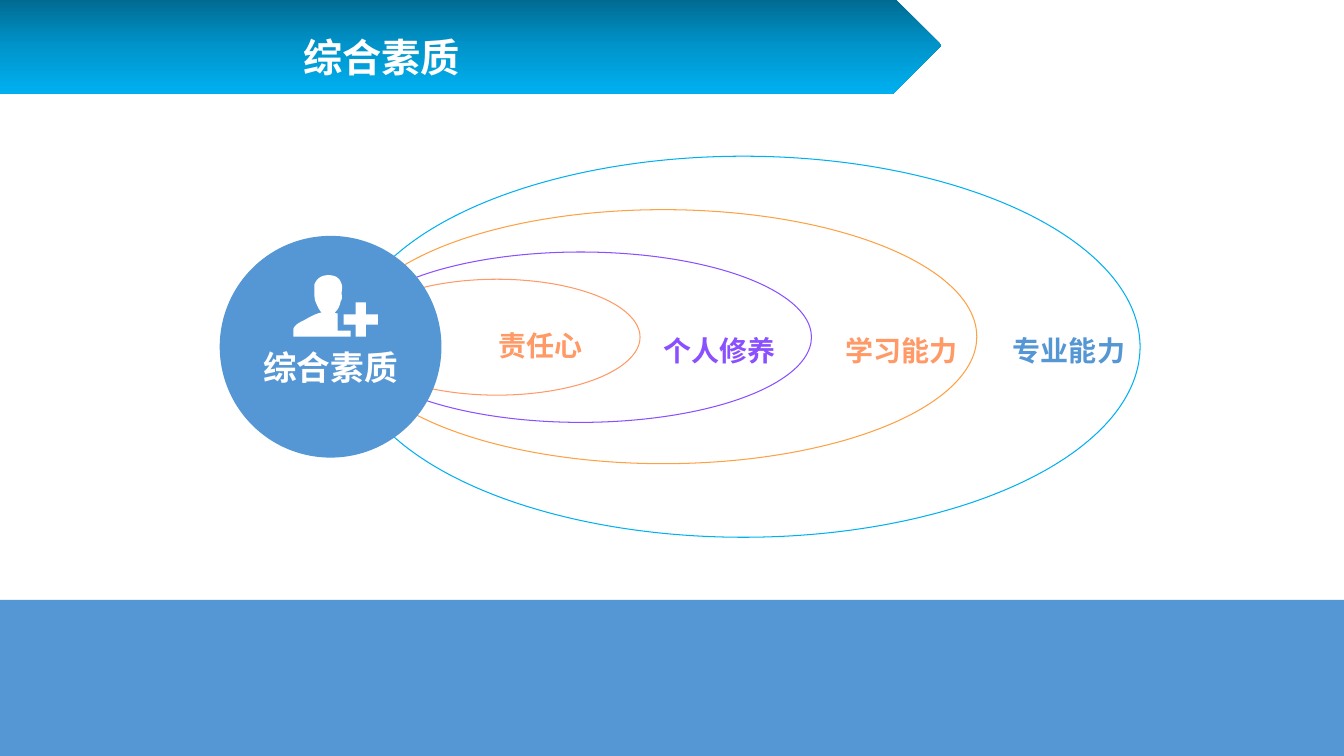
from copy import deepcopy

from lxml.etree import SubElement
from pptx import Presentation
from pptx.dml.color import RGBColor
from pptx.enum.shapes import MSO_SHAPE
from pptx.enum.text import MSO_ANCHOR, MSO_AUTO_SIZE, PP_ALIGN
from pptx.oxml.ns import qn
from pptx.util import Inches, Pt

BLUE = RGBColor(0x54, 0x97, 0xD4)
SKY = RGBColor(0x00, 0xB0, 0xF0)
MID_SKY = RGBColor(0x00, 0x94, 0xCA)
DEEP_SKY = RGBColor(0x00, 0x68, 0x8E)
CORAL = RGBColor(0xFF, 0x99, 0x66)
ORANGE = RGBColor(0xFE, 0xA1, 0x44)
VIOLET = RGBColor(0x8A, 0x4F, 0xFF)
WHITE = RGBColor(0xFF, 0xFF, 0xFF)

COLUMNS, ROWS = 133.33, 75  # square grid cells, ten to the inch


def grid(*cells):
    return [Inches(cell / 10) for cell in cells]


def curve(start, c1, c2, end, steps=8):
    """Points along a Bezier curve, without its start."""
    points = []
    for i in range(1, steps + 1):
        t = i / steps
        u = 1 - t
        points.append(tuple(u**3 * a + 3 * u * u * t * b + 3 * u * t * t * c + t**3 * d
                            for a, b, c, d in zip(start, c1, c2, end)))
    return points


class Deck:
    font = "Noto Sans CJK SC"
    line_spacing = 1.5
    ring_width = Pt(0.75)

    def __init__(self, prs):
        self.slide = prs.slides.add_slide(prs.slide_layouts[5])
        self.shapes = self.slide.shapes

    def add_text(self, tf, text, size, color, align=PP_ALIGN.LEFT, spacing=None):
        p = tf.paragraphs[0]
        p.alignment = align
        p.line_spacing = spacing
        r = p.add_run()
        r.text = text
        r.font.size = Pt(size)
        r.font.bold = True
        r.font.name = self.font
        r.font.color.rgb = color
        SubElement(r.font._element, qn("a:ea"), typeface=self.font)

    def paint(self, sp, fill=None, line=None):
        sp.shadow.inherit = False
        if fill is None:
            sp.fill.background()
        else:
            sp.fill.solid()
            sp.fill.fore_color.rgb = fill
        if line is None:
            sp.line.fill.background()
        else:
            sp.line.color.rgb = line
            sp.line.width = self.ring_width
        return sp

    def shape(self, kind, box, fill=None, line=None):
        return self.paint(self.shapes.add_shape(kind, *grid(*box)), fill, line)

    def banner(self, box, colors):
        sp = self.shape(MSO_SHAPE.PENTAGON, box)
        sp.fill.gradient()
        sp.fill.gradient_angle = 270
        stops = sp._element.find(".//" + qn("a:gsLst"))
        stops.append(deepcopy(stops[-1]))
        for i, (stop, color) in enumerate(zip(sp.fill.gradient_stops, colors)):
            stop.position = i / (len(colors) - 1)
            stop.color.rgb = color

    def title(self, box, text):
        sp = self.shapes.title
        sp.left, sp.top, sp.width, sp.height = grid(*box)
        tf = sp.text_frame
        tf.word_wrap = False
        tf.auto_size = MSO_AUTO_SIZE.SHAPE_TO_FIT_TEXT
        tf.vertical_anchor = MSO_ANCHOR.TOP
        self.add_text(tf, text, 28, WHITE, spacing=self.line_spacing)
        self.shapes._spTree.append(sp._element)  # bring in front of the banner

    def label(self, box, text, color):
        tf = self.shapes.add_textbox(*grid(*box)).text_frame
        tf.word_wrap = True
        tf.auto_size = MSO_AUTO_SIZE.SHAPE_TO_FIT_TEXT
        self.add_text(tf, text, 20, color, spacing=self.line_spacing)

    def hub(self, box, text):
        tf = self.shape(MSO_SHAPE.OVAL, box, BLUE).text_frame
        tf.word_wrap = True
        tf.vertical_anchor = MSO_ANCHOR.MIDDLE
        tf.margin_top = Inches(0.45)  # leaves room for the icon
        self.add_text(tf, text, 24, WHITE, PP_ALIGN.CENTER)

    def outline(self, points, fill):
        start, *rest = [grid(*point) for point in points]
        builder = self.shapes.build_freeform(*start, scale=1.0)
        builder.add_line_segments(rest, close=True)
        return self.paint(builder.convert_to_shape(), fill)


def person():
    points = [(34.8, 32.8), (33.5, 32.8), (33.5, 31.1)]
    for c1, c2, end in [
        ((33.5, 31.1), (33.3, 31.1), (33.2, 31)),
        ((33.5, 30.8), (33.7, 30.4), (33.8, 29.9)),
        ((34, 29.6), (33.9, 29.4), (33.9, 29.1)),
        ((33.9, 28.8), (34, 28.4), (33.9, 28.2)),
        ((33.7, 27.5), (33.2, 27.3), (32.6, 27.3)),
        ((32, 27.3), (31.5, 27.5), (31.2, 28.2)),
        ((31.2, 28.4), (31.2, 28.8), (31.2, 29.1)),
        ((31.2, 29.4), (31.2, 29.6), (31.3, 29.9)),
        ((31.5, 30.4), (31.7, 30.8), (31.9, 31)),
        ((31, 31.2), (30.4, 31.7), (29.9, 31.9)),
        ((29.1, 32.3), (29.1, 32.7), (29.1, 32.7)),
    ]:
        points += curve(points[-1], c1, c2, end)
    return points + [(29.1, 33.4), (34.8, 33.4)]


def main():
    prs = Presentation()
    prs.slide_width, prs.slide_height = grid(COLUMNS, ROWS)
    deck = Deck(prs)

    # Header and footer band
    deck.banner((0, -0.3, 93.4, 9.6), (DEEP_SKY, MID_SKY, SKY))
    deck.title((29.1, 0.5, 17.7, 7.2), "综合素质")
    deck.shape(MSO_SHAPE.RECTANGLE, (0, 59.5, COLUMNS, ROWS - 59.5), BLUE)

    # Rings, from the inside out
    for box, color in [
        ((35.1, 27.7, 28.4, 11.5), CORAL),
        ((34.7, 25, 45.8, 16.9), VIOLET),
        ((34.7, 20.8, 62.2, 25.2), ORANGE),
        ((34.4, 15.5, 78.7, 37.8), SKY),
    ]:
        deck.shape(MSO_SHAPE.OVAL, box, line=color)

    # Ring labels
    for left, top, width, text, color in [
        (99.5, 30.9, 16.8, "专业能力", BLUE),
        (82.9, 30.9, 16.8, "学习能力", CORAL),
        (64.8, 30.9, 16.8, "个人修养", VIOLET),
        (48.5, 30.4, 10.9, "责任心", CORAL),
    ]:
        deck.label((left, top, width, 5.5), text, color)

    # Hub with its icon
    deck.hub((21.8, 23.4, 22, 22), "综合素质")
    deck.outline(person(), WHITE)
    plus = deck.shape(MSO_SHAPE.CROSS, (34.1, 30, 3.4, 3.4), WHITE)
    plus.adjustments[0] = 0.35

    prs.save("out.pptx")


if __name__ == "__main__":
    main()
